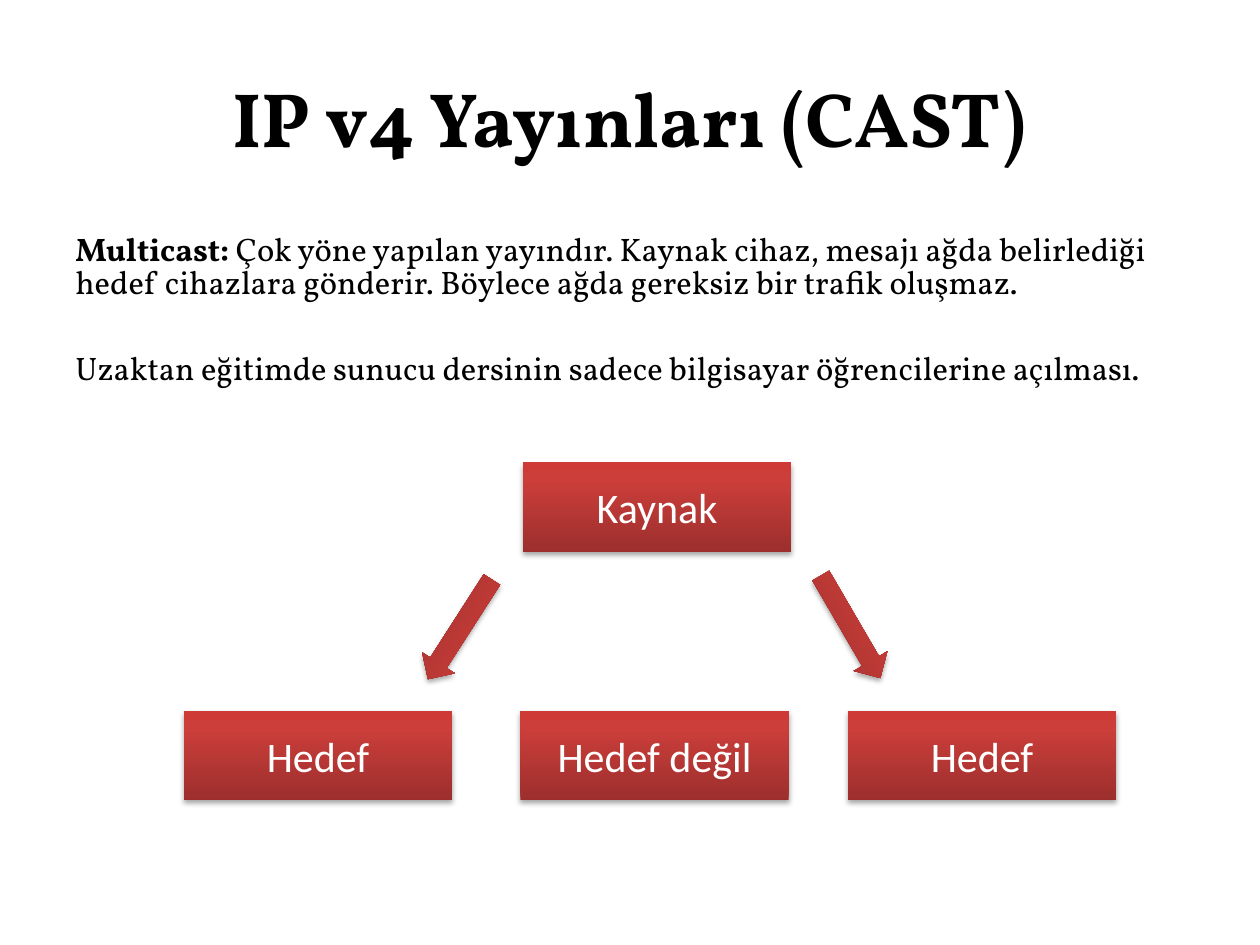
from lxml.etree import SubElement
from pptx import Presentation
from pptx.dml.color import RGBColor
from pptx.enum.shapes import MSO_SHAPE
from pptx.enum.text import MSO_ANCHOR, PP_ALIGN
from pptx.oxml.ns import qn
from pptx.util import Inches, Pt

RED_STOPS = [(0, "9C2F2D"), (80, "CB3E3A"), (100, "CE3B37")]
TITLE_FONT = {"name": "Vollkorn", "size": Pt(44), "bold": True}
BODY_FONT = {"name": "Vollkorn", "size": Pt(18.6), "bold": False}
NODE_FONT = {"name": "Calibri", "size": Pt(24)}
NODE_SIZE = (2.13, 0.71)
ARROW_SIZE = (0.94, 0.31)
TARGET_TOP = 5.64


def color(hex_string):
    return RGBColor.from_string(hex_string)


def add_run(paragraph, text, formats, hex_color="000000"):
    run = paragraph.add_run()
    run.text = text
    for attribute, value in formats.items():
        setattr(run.font, attribute, value)
    run.font.color.rgb = color(hex_color)


def add_title(slide, text):
    title = slide.shapes.title
    title.left, title.top, title.width, title.height = map(Inches, (0.5, 0.3, 9, 1.25))
    title.text_frame.vertical_anchor = MSO_ANCHOR.MIDDLE
    heading = title.text_frame.paragraphs[0]
    heading.alignment = PP_ALIGN.CENTER
    add_run(heading, text, TITLE_FONT)


def add_description(slide, term, definition, example):
    frame = slide.shapes.add_textbox(*map(Inches, (0.5, 1.75, 9, 1.76))).text_frame
    frame.word_wrap = True
    frame.margin_top = Inches(0.11)
    first, second = frame.paragraphs[0], frame.add_paragraph()
    for paragraph in (first, second):
        paragraph.line_spacing = 0.86
    second.space_before = Pt(30)
    add_run(first, term, {**BODY_FONT, "bold": True})
    add_run(first, definition, BODY_FONT)
    add_run(second, example, BODY_FONT)


def add_red_shape(slide, kind, left, top, size):
    """Add a shape with the red gradient and a soft shadow below it."""
    shape = slide.shapes.add_shape(kind, *map(Inches, (left, top, *size)))
    shape.line.fill.background()
    shape.fill.gradient()
    shape.fill.gradient_angle = 90
    properties = shape._element.spPr

    # Three gradient stops
    stops = properties.find(qn("a:gradFill")).find(qn("a:gsLst"))
    for stop in list(stops):
        stops.remove(stop)
    for position, hex_color in RED_STOPS:
        stop = SubElement(stops, qn("a:gs"), pos=str(position * 1000))
        SubElement(stop, qn("a:srgbClr"), val=hex_color)

    # Shadow
    shape.shadow.inherit = False
    shadow = SubElement(properties.find(qn("a:effectLst")), qn("a:outerShdw"),
                        blurRad=str(Pt(3.1)), dist=str(Pt(1.8)),
                        dir="5400000", rotWithShape="0")
    black = SubElement(shadow, qn("a:srgbClr"), val="000000")
    SubElement(black, qn("a:alpha"), val="35000")
    return shape


def add_node(slide, label, left, top):
    frame = add_red_shape(slide, MSO_SHAPE.RECTANGLE, left, top, NODE_SIZE).text_frame
    frame.vertical_anchor = MSO_ANCHOR.MIDDLE
    frame.paragraphs[0].alignment = PP_ALIGN.CENTER
    add_run(frame.paragraphs[0], label, NODE_FONT, "FFFFFF")


def add_arrow(slide, left, top, angle):
    add_red_shape(slide, MSO_SHAPE.RIGHT_ARROW, left, top, ARROW_SIZE).rotation = angle


def main():
    presentation = Presentation()
    presentation.slide_width, presentation.slide_height = Inches(10), Inches(7.5)
    slide = presentation.slides.add_slide(presentation.slide_layouts[5])

    add_title(slide, "IP v4 Yayınları (CAST)")
    add_description(
        slide,
        "Multicast: ",
        "Çok yöne yapılan yayındır. Kaynak cihaz, mesajı ağda belirlediği hedef "
        "cihazlara gönderir. Böylece ağda gereksiz bir trafik oluşmaz.",
        "Uzaktan eğitimde sunucu dersinin sadece bilgisayar öğrencilerine açılması.",
    )

    # Source and the row of possible targets
    add_node(slide, "Kaynak", 4.15, 3.67)
    for label, left in (("Hedef", 1.46), ("Hedef değil", 4.13), ("Hedef", 6.73)):
        add_node(slide, label, left, TARGET_TOP)

    # Arrows to the two real targets
    add_arrow(slide, 3.18, 4.84, 122.7)
    add_arrow(slide, 6.28, 4.82, 59.8)

    presentation.save("out.pptx")


if __name__ == "__main__":
    main()
